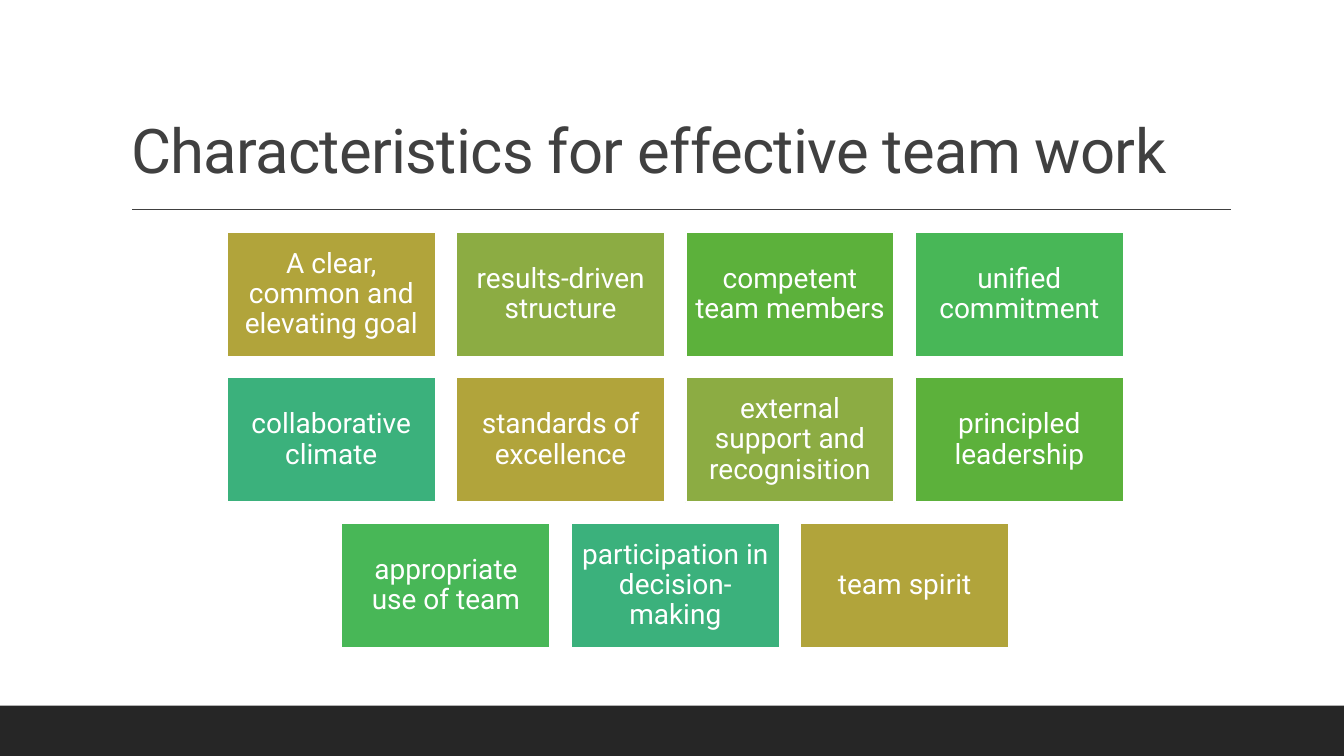
from dataclasses import dataclass

from lxml.etree import SubElement
from pptx import Presentation
from pptx.dml.color import RGBColor
from pptx.enum.shapes import MSO_CONNECTOR, MSO_SHAPE
from pptx.enum.text import MSO_ANCHOR, MSO_AUTO_SIZE, PP_ALIGN
from pptx.oxml.ns import qn
from pptx.shapes.autoshape import Shape
from pptx.slide import Slide
from pptx.text.text import TextFrame
from pptx.util import Cm, Pt

COLOURS = {
    "white": "FFFFFF",
    "heading": "404040",
    "footer": "262626",
    "mustard": "B1A43B",
    "olive": "8CAC43",
    "grass": "5CB13B",
    "emerald": "48B757",
    "jade": "3BB17C",
}
TILE_CYCLE = ("mustard", "olive", "grass", "emerald", "jade")

ROWS = (
    (
        "A clear, common and elevating goal",
        "results-driven structure",
        "competent team members",
        "unified commitment",
    ),
    (
        "collaborative climate",
        "standards of excellence",
        "external support and recognisition",
        "principled leadership",
    ),
    (
        "appropriate use of team",
        "participation in decision-making",
        "team spirit",
    ),
)

SLIDE_WIDTH, SLIDE_HEIGHT = 33.87, 19.05
TILE_WIDTH, TILE_HEIGHT = 5.26, 3.15
COLUMN_STEP, ROW_STEP = 5.78, 3.67
GRID_CENTRE, GRID_TOP = 17.02, 5.84
FOOTER_HEIGHT = 1.27

TITLE_PLACE = {"left": Cm(3.05), "top": Cm(0.79), "width": Cm(27.94), "height": Cm(4.04)}
TITLE_FRAME = {
    "word_wrap": True,
    "auto_size": MSO_AUTO_SIZE.NONE,
    "vertical_anchor": MSO_ANCHOR.BOTTOM,
}
TITLE_PARAGRAPH = {"alignment": PP_ALIGN.LEFT, "line_spacing": 0.9}
TITLE_FONT = {"name": "Roboto", "size": Pt(44)}
TILE_FRAME = {
    "word_wrap": True,
    "vertical_anchor": MSO_ANCHOR.MIDDLE,
    "margin_left": Cm(0.21),
    "margin_right": Cm(0.21),
    "margin_top": Cm(0.21),
    "margin_bottom": Cm(0.21),
}
TILE_PARAGRAPH = {"alignment": PP_ALIGN.CENTER, "line_spacing": 0.9}
TILE_FONT = {"name": "Roboto", "size": Pt(20)}


@dataclass(frozen=True)
class Tile:
    characteristic: str
    colour: str
    left: float
    top: float


def rgb(colour: str) -> RGBColor:
    return RGBColor.from_string(COLOURS[colour])


def apply_format(target: object, values: dict) -> None:
    for attribute, value in values.items():
        setattr(target, attribute, value)


def write_text(
    frame: TextFrame, wording: str, colour: str, frame_format: dict, paragraph_format: dict, font_format: dict
) -> None:
    frame.text = wording
    paragraph = frame.paragraphs[0]
    font = paragraph.runs[0].font
    apply_format(frame, frame_format)
    apply_format(paragraph, paragraph_format)
    apply_format(font, font_format)
    font.color.rgb = rgb(colour)


def draw_block(slide: Slide, left: float, top: float, width: float, height: float, colour: str) -> Shape:
    block = slide.shapes.add_shape(MSO_SHAPE.RECTANGLE, Cm(left), Cm(top), Cm(width), Cm(height))
    block.shadow.inherit = False
    block.fill.solid()
    block.fill.fore_color.rgb = rgb(colour)
    block.line.fill.background()
    return block


def draw_heading(slide: Slide) -> None:
    heading = slide.shapes.title
    apply_format(heading, TITLE_PLACE)
    write_text(
        heading.text_frame,
        "Characteristics for effective team work",
        "heading",
        TITLE_FRAME,
        TITLE_PARAGRAPH,
        TITLE_FONT,
    )
    heading.text_frame.paragraphs[0].runs[0]._r.get_or_add_rPr().set("spc", "-50")


def draw_heading_rule(slide: Slide) -> None:
    rule = slide.shapes.add_connector(MSO_CONNECTOR.STRAIGHT, Cm(3.33), Cm(5.28), Cm(31.01), Cm(5.28))
    rule.line.color.rgb = rgb("heading")
    rule.line.width = Pt(1)
    SubElement(rule._element.spPr, qn("a:effectLst"))


def lay_out_tiles() -> list[Tile]:
    tiles: list[Tile] = []
    for row_index, row in enumerate(ROWS):
        row_width = (len(row) - 1) * COLUMN_STEP + TILE_WIDTH
        row_left = GRID_CENTRE - row_width / 2
        for column, characteristic in enumerate(row):
            colour = TILE_CYCLE[len(tiles) % len(TILE_CYCLE)]
            left = row_left + column * COLUMN_STEP
            tiles.append(Tile(characteristic, colour, left, GRID_TOP + row_index * ROW_STEP))
    return tiles


def draw_tile(slide: Slide, tile: Tile) -> None:
    block = draw_block(slide, tile.left, tile.top, TILE_WIDTH, TILE_HEIGHT, tile.colour)
    block.line.color.rgb = rgb("white")
    block.line.width = Pt(1.25)
    write_text(block.text_frame, tile.characteristic, "white", TILE_FRAME, TILE_PARAGRAPH, TILE_FONT)


def main() -> None:
    presentation = Presentation()
    presentation.slide_width = Cm(SLIDE_WIDTH)
    presentation.slide_height = Cm(SLIDE_HEIGHT)
    slide = presentation.slides.add_slide(presentation.slide_layouts.get_by_name("Title Only"))
    slide.background.fill.solid()
    slide.background.fill.fore_color.rgb = rgb("white")
    draw_heading(slide)
    draw_heading_rule(slide)
    draw_block(slide, 0, SLIDE_HEIGHT - FOOTER_HEIGHT, SLIDE_WIDTH, FOOTER_HEIGHT, "footer")
    for tile in lay_out_tiles():
        draw_tile(slide, tile)
    presentation.save("out.pptx")


if __name__ == "__main__":
    main()
